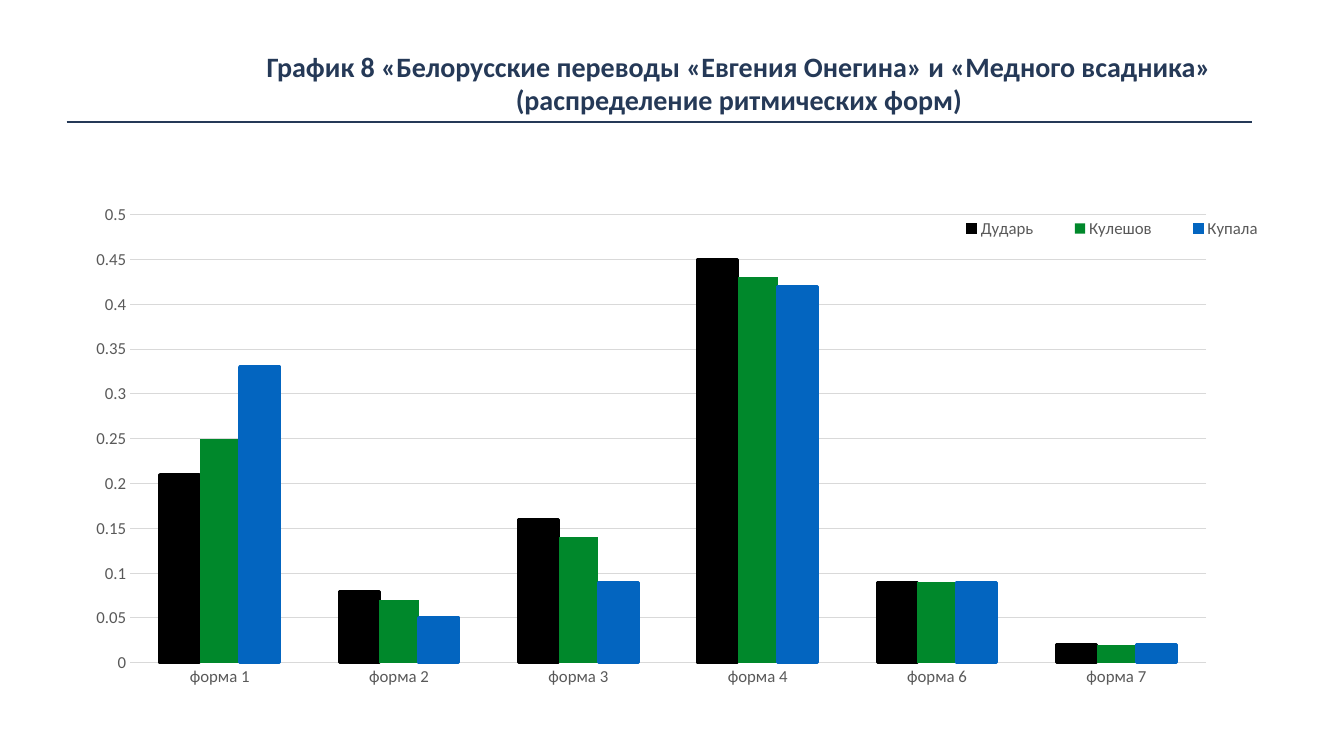
from lxml import etree
from pptx import Presentation
from pptx import util as u
from pptx.chart.data import CategoryChartData
from pptx.dml.color import RGBColor
from pptx.enum import chart as charts, shapes, text
from pptx.oxml import ns

FONT = "Calibri"
NAVY = RGBColor(0x25, 0x39, 0x57)
BLACK = RGBColor(0x00, 0x00, 0x00)
GREEN = RGBColor(0x00, 0x88, 0x2B)
BLUE = RGBColor(0x03, 0x65, 0xC0)
LABEL_GRAY = RGBColor(0x59, 0x59, 0x59)
GRID_GRAY = RGBColor(0xD9, 0xD9, 0xD9)

TITLE_LINES = [
    "График 8 «Белорусские переводы «Евгения Онегина» и «Медного всадника»",
    "(распределение ритмических форм)",
]
FORMS = ["форма 1", "форма 2", "форма 3", "форма 4", "форма 6", "форма 7"]
# Translator, share of each form, colour, whether the bars are outlined
TRANSLATORS = [
    ("Дударь", (0.21, 0.08, 0.16, 0.45, 0.09, 0.02), BLACK, True),
    ("Кулешов", (0.25, 0.07, 0.14, 0.43, 0.09, 0.02), GREEN, False),
    ("Купала", (0.33, 0.05, 0.09, 0.42, 0.09, 0.02), BLUE, True),
]


def inches(*lengths):
    return [u.Inches(length) for length in lengths]


def style_font(font, size, color, bold=False):
    font.name, font.size, font.bold = FONT, u.Pt(size), bold
    font.color.rgb = color


def style_line(line, color, width):
    line.color.rgb = color
    line.width = u.Pt(width)


def add_title(slide):
    box = slide.shapes.add_textbox(*inches(1.45, 0.46, 11.76, 0.72))
    frame = box.text_frame
    frame.word_wrap = True
    frame.vertical_anchor = text.MSO_ANCHOR.MIDDLE
    frame.margin_left = frame.margin_right = u.Inches(0.04)
    frame.margin_top = frame.margin_bottom = u.Inches(0.04)
    frame.text = "\n".join(TITLE_LINES)
    for paragraph in frame.paragraphs:
        paragraph.alignment = text.PP_ALIGN.CENTER
        style_font(paragraph.runs[0].font, 20, NAVY, bold=True)


def add_rule(slide):
    rule = slide.shapes.add_connector(
        shapes.MSO_CONNECTOR.STRAIGHT, *inches(0.66, 1.21, 12.42, 1.21))
    style_line(rule.line, NAVY, 1)
    etree.SubElement(rule._element.spPr, ns.qn("a:effectLst"))


def set_layout(element, index, fractions, inner=False):
    """Place a chart part by fractions of the chart: left, top, width, height."""
    for old_layout in element.findall(ns.qn("c:layout")):
        element.remove(old_layout)
    layout = etree.Element(ns.qn("c:layout"))
    manual = etree.SubElement(layout, ns.qn("c:manualLayout"))
    settings = [("layoutTarget", "inner")] if inner else []
    settings += [("xMode", "edge"), ("yMode", "edge")]
    settings += zip("xywh", fractions)
    for tag, value in settings:
        etree.SubElement(manual, ns.qn("c:" + tag)).set("val", str(value))
    element.insert(index, layout)


def style_axis(axis):
    axis.major_tick_mark = axis.minor_tick_mark = charts.XL_TICK_MARK.NONE
    style_font(axis.tick_labels.font, 12, LABEL_GRAY)


def add_forms_chart(slide):
    data = CategoryChartData()
    data.categories = FORMS
    for name, shares, _, _ in TRANSLATORS:
        data.add_series(name, shares)
    chart = slide.shapes.add_chart(
        charts.XL_CHART_TYPE.COLUMN_CLUSTERED,
        *inches(0.67, 1.69, 12.41, 5.49), data).chart
    chart.has_title = False
    style_font(chart.font, 10, BLACK)

    # Columns
    plot = chart.plots[0]
    plot.gap_width, plot.overlap = 150, 0
    plot.vary_by_categories = False
    for series, (_, _, color, outlined) in zip(plot.series, TRANSLATORS):
        series.format.fill.solid()
        series.format.fill.fore_color.rgb = color
        if outlined:
            style_line(series.format.line, color, 2.25)
        else:
            series.format.line.fill.background()

    # Axes and grid
    style_axis(chart.category_axis)
    style_line(chart.category_axis.format.line, GRID_GRAY, 0.75)
    values = chart.value_axis
    style_axis(values)
    values.minimum_scale, values.maximum_scale, values.major_unit = 0, 0.5, 0.05
    values.tick_labels.number_format = "General"
    values.tick_labels.number_format_is_linked = False
    values.format.line.fill.background()
    style_line(values.major_gridlines.format.line, GRID_GRAY, 0.75)

    # Legend and placement
    chart.has_legend = True
    legend = chart.legend
    legend.position = charts.XL_LEGEND_POSITION.BOTTOM
    legend.include_in_layout = False
    style_font(legend.font, 12, LABEL_GRAY)
    set_layout(legend._element, 1, (0.69, 0.08, 0.29, 0.05))
    plot_area = chart._chartSpace.chart.plotArea
    set_layout(plot_area, 0, (0.05, 0.08, 0.86, 0.81), inner=True)


def main():
    presentation = Presentation()
    presentation.slide_width, presentation.slide_height = inches(13.33, 7.5)
    slide = presentation.slides.add_slide(presentation.slide_layouts[6])
    add_title(slide)
    add_rule(slide)
    add_forms_chart(slide)
    presentation.save("out.pptx")


if __name__ == "__main__":
    main()
